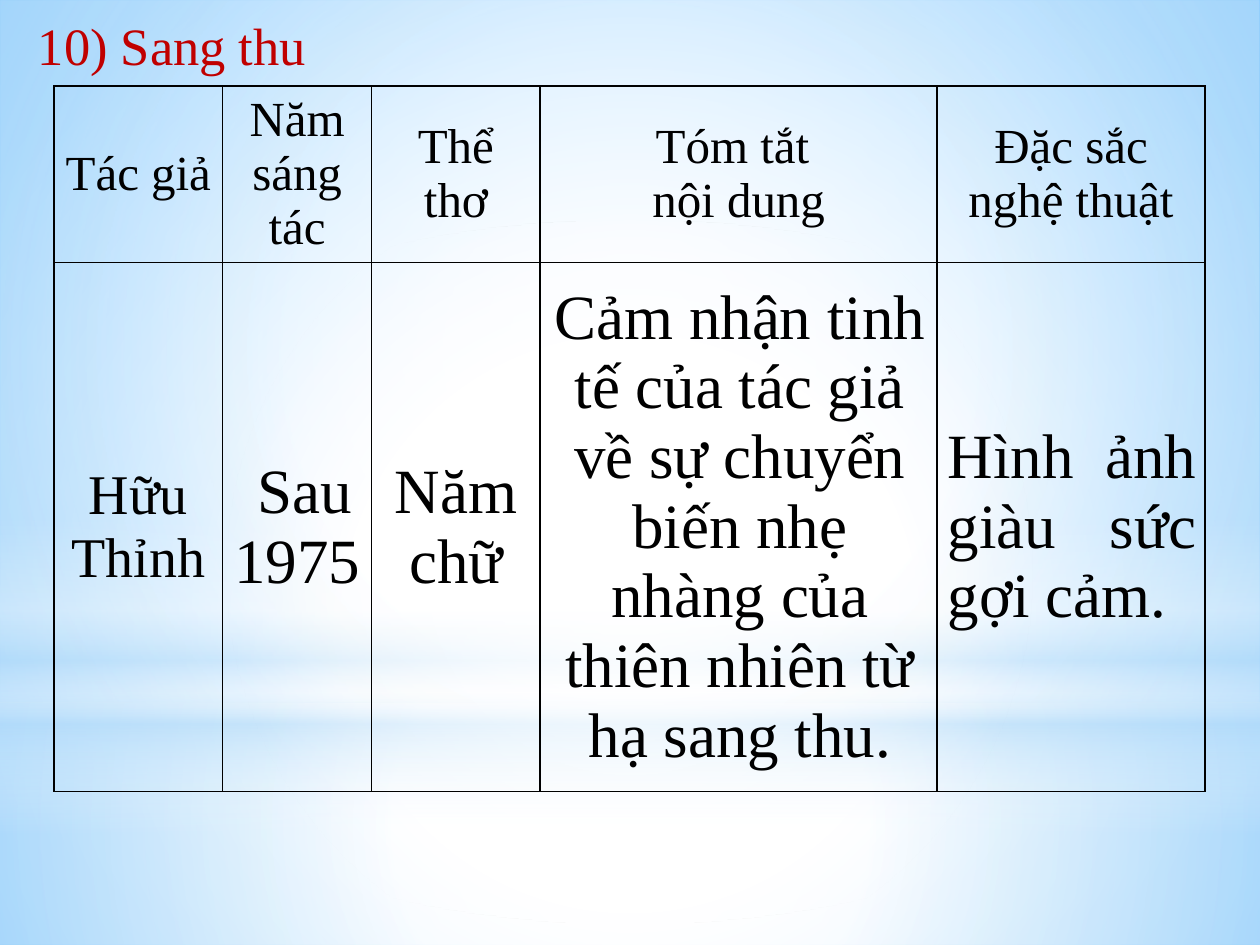
from lxml.etree import SubElement
from pptx import Presentation
from pptx.dml.color import RGBColor
from pptx.enum.shapes import MSO_SHAPE
from pptx.enum.text import MSO_ANCHOR, MSO_AUTO_SIZE, PP_ALIGN
from pptx.oxml import parse_xml
from pptx.oxml.ns import nsdecls, qn
from pptx.util import Cm, Pt


def paint_gradient(properties, stops, focus=None):
    """Swap a solid fill for a gradient: circular around focus, else downward."""
    stop_xml = "".join(
        f'<a:gs pos="{position * 1000}"><a:srgbClr val="{color}">'
        f'<a:alpha val="{opacity * 1000}"/></a:srgbClr></a:gs>'
        for position, color, opacity in stops)
    if focus:
        sides = " ".join(f'{side}="{value * 1000}"' for side, value in zip("ltrb", focus))
        direction = f'<a:path path="circle"><a:fillToRect {sides}/></a:path>'
    else:
        direction = '<a:lin ang="5400000" scaled="0"/>'
    gradient = parse_xml(f'<a:gradFill {nsdecls("a")} rotWithShape="1">'
                         f'<a:gsLst>{stop_xml}</a:gsLst>{direction}</a:gradFill>')
    properties.replace(properties.find(qn("a:solidFill")), gradient)


def format_text(paragraph, size, color, alignment):
    paragraph.alignment = alignment
    for span in paragraph.runs:
        span.font.name = "Times New Roman"
        span.font.size = Pt(size)
        span.font.color.rgb = RGBColor.from_string(color)


deck = Presentation()
deck.slide_width, deck.slide_height = Cm(25.4), Cm(19.05)
page = deck.slides.add_slide(deck.slide_layouts[5])

# Background
WHITE, SKY = "FFFFFF", "B4DCFA"
CENTER = (50, 50, 50, 50)
page.background.fill.solid()
paint_gradient(page.element.find(".//" + qn("p:bgPr")),
               [(0, WHITE, 100), (36, WHITE, 100), (100, "63BCFF", 100)],
               (24, 44, 24, 12))

# Soft light bands: shape, top, height, stops, focus
bands = [
    (MSO_SHAPE.RECTANGLE, 14.17, 4.88,
     [(0, WHITE, 91), (37, WHITE, 76), (100, SKY, 79)], CENTER),
    (MSO_SHAPE.RECTANGLE, 0, 14.17,
     [(0, WHITE, 89), (48, WHITE, 62), (100, SKY, 79)], CENTER),
    (MSO_SHAPE.RECTANGLE, 10.46, 6.35,
     [(0, WHITE, 0), (29, WHITE, 30), (45, SKY, 40),
      (55, WHITE, 26), (65, SKY, 60), (100, WHITE, 0)], None),
    (MSO_SHAPE.OVAL, 4.45, 14.17, [(0, WHITE, 100), (56, WHITE, 0)], CENTER),
]
for kind, top, height, stops, focus in bands:
    band = page.shapes.add_shape(kind, 0, Cm(top), deck.slide_width, Cm(height))
    band.shadow.inherit = False
    band.line.fill.background()
    band.fill.solid()
    paint_gradient(band.element.spPr, stops, focus)

# Title, brought in front of the bands
title = page.shapes.title
title.left, title.top, title.width, title.height = Cm(0.51), Cm(0.13), Cm(6.25), Cm(1.55)
title.text_frame.text = "10) Sang thu"
title.text_frame.word_wrap = False
title.text_frame.auto_size = MSO_AUTO_SIZE.SHAPE_TO_FIT_TEXT
title.text_frame.vertical_anchor = MSO_ANCHOR.TOP
format_text(title.text_frame.paragraphs[0], 30, "C00000", PP_ALIGN.LEFT)
page.shapes.element.append(title.element)

# Table
rows = [
    ["Tác giả", "Năm sáng tác", "Thể thơ", "Tóm tắt \nnội dung", "Đặc sắc nghệ thuật"],
    ["Hữu Thỉnh", " Sau 1975", "Năm chữ",
     "Cảm nhận tinh tế của tác giả về sự chuyển biến nhẹ nhàng của thiên nhiên từ hạ sang thu.",
     "Hình ảnh giàu sức gợi cảm."],
]
sizes = [[28] * 5, [32, 36, 36, 36, 36]]
column_widths = [3.4, 3, 3.4, 8, 5.4]
row_heights = [3.56, 10.67]
table = page.shapes.add_table(2, 5, Cm(1.09), Cm(1.73),
                              Cm(sum(column_widths)), Cm(sum(row_heights))).table
table.first_row = table.horz_banding = False
for column, width in zip(table.columns, column_widths):
    column.width = Cm(width)
for row, height in zip(table.rows, row_heights):
    row.height = Cm(height)

for r, texts in enumerate(rows):
    for c, text in enumerate(texts):
        cell = table.cell(r, c)
        cell.text_frame.text = text
        cell.vertical_anchor = MSO_ANCHOR.MIDDLE
        cell.margin_left = cell.margin_right = Cm(0.17)
        cell.margin_top = cell.margin_bottom = 0
        long_text = r == 1 and c >= 3
        alignment = PP_ALIGN.JUSTIFY if long_text and c == 4 else PP_ALIGN.CENTER
        for paragraph in cell.text_frame.paragraphs:
            format_text(paragraph, sizes[r][c], "000000", alignment)
            if long_text:
                paragraph._p.get_or_add_pPr().set("marL", str(Cm(0.05)))
        # Borders come before the fill in the cell properties
        properties = cell._tc.get_or_add_tcPr()
        for side in ("lnL", "lnR", "lnT", "lnB"):
            border = SubElement(properties, qn(f"a:{side}"), w=str(Pt(1)))
            color_fill = SubElement(border, qn("a:solidFill"))
            SubElement(color_fill, qn("a:srgbClr"), val="000000")
        cell.fill.background()

deck.save("out.pptx")
